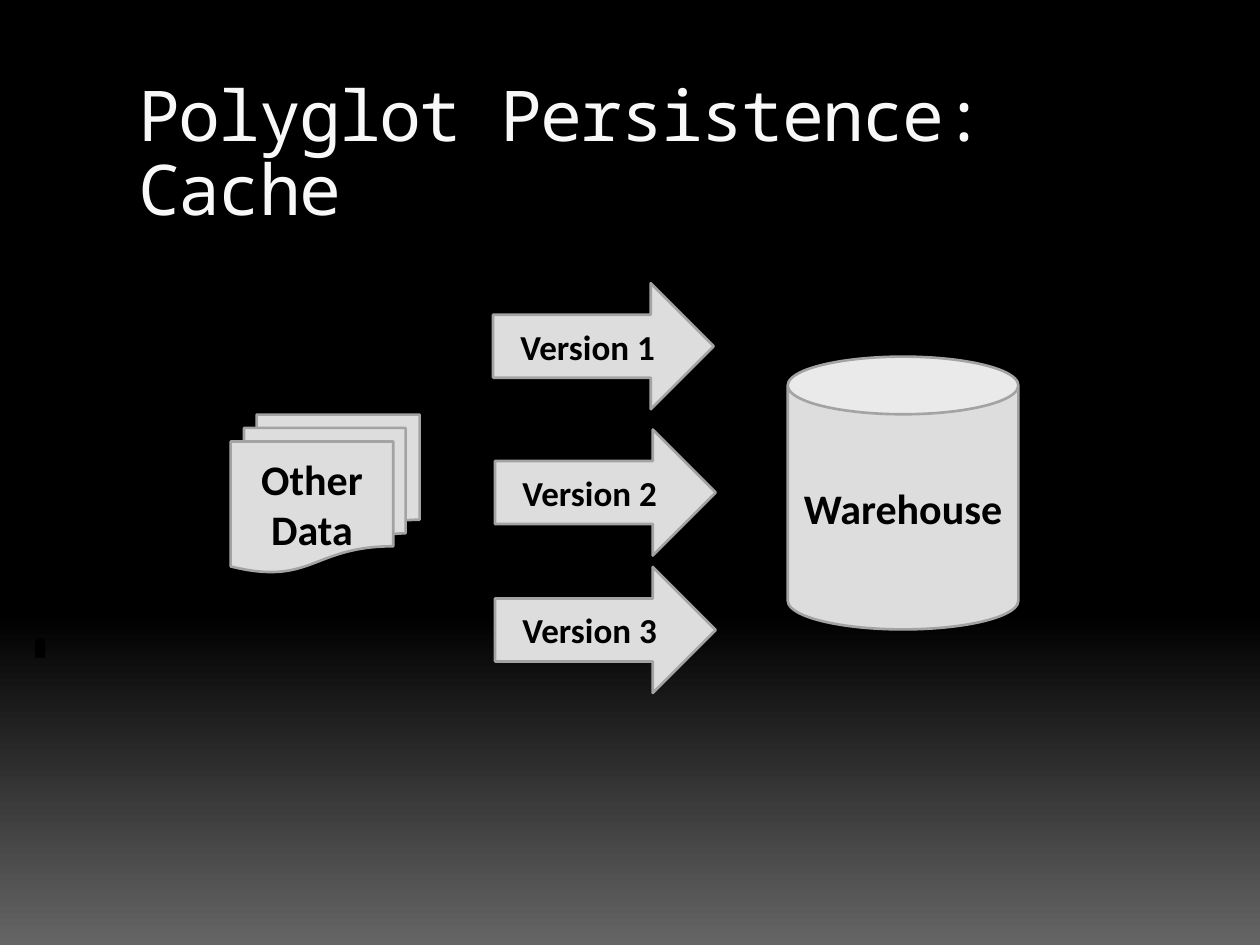
import pptx
import pptx.dml.color
import pptx.enum.shapes
import pptx.enum.text
import pptx.util

Cm = pptx.util.Cm
Pt = pptx.util.Pt
Kind = pptx.enum.shapes.MSO_SHAPE
Align = pptx.enum.text.PP_ALIGN
Anchor = pptx.enum.text.MSO_ANCHOR


def tint(code):
    """Turn a hex string into a colour."""
    return pptx.dml.color.RGBColor.from_string(code)


def style(para, face, size, code, bold=False):
    """Set the font of a paragraph."""
    font = para.font
    font.name, font.size, font.bold = face, Pt(size), bold
    font.color.rgb = tint(code)


def node(slide, kind, box, text, size):
    """Draw one grey shape with a bold label."""
    shape = slide.shapes.add_shape(kind, *map(Cm, box))
    shape.shadow.inherit = False
    shape.fill.solid()
    shape.fill.fore_color.rgb = tint("DDDDDD")
    shape.line.color.rgb = tint("A3A3A3")
    shape.line.width = Pt(1.5)
    frame = shape.text_frame
    frame.word_wrap = True
    frame.vertical_anchor = Anchor.MIDDLE
    para = frame.paragraphs[0]
    para.text = text
    para.alignment = Align.CENTER
    style(para, "Calibri", size, "000000", True)


def backdrop(slide, box):
    """Fill the background and place the dark edge mark."""
    fill = slide.background.fill
    fill.gradient()
    fill.gradient_angle = 270
    stops = zip(fill.gradient_stops, ((0.65, "000000"), (1, "656565")))
    for stop, (place, code) in stops:
        stop.position = place
        stop.color.rgb = tint(code)
    mark = slide.shapes.add_shape(Kind.RECTANGLE, *map(Cm, box))
    mark.shadow.inherit = False
    mark.fill.solid()
    mark.fill.fore_color.rgb = tint("000000")
    mark.line.fill.background()


def title(slide, box, text):
    """Place the slide title."""
    frame = slide.shapes.add_textbox(*map(Cm, box)).text_frame
    frame.word_wrap = True
    frame.margin_top = Cm(0.25)
    para = frame.paragraphs[0]
    para.text = text
    para.line_spacing = 0.88
    style(para, "Noto Sans Mono", 40, "F8F8F8")
    para.runs[0].font._element.set("spc", "-100")


def diagram(slide, box):
    """Draw the store, the documents and the version arrows."""
    left, top, width, height = box
    node(slide, Kind.CAN, (left + width - 4.65, top + 1.48, 4.65, 5.5),
         "Warehouse", 24)
    node(slide, Kind.FLOWCHART_MULTIDOCUMENT,
         (left, top + 2.65, 3.81, 3.18), "Other Data", 24)
    spots = ((5.29, 0), (5.33, 2.95), (5.33, height - 2.54))
    for num, (dx, dy) in enumerate(spots, 1):
        node(slide, Kind.RIGHT_ARROW, (left + dx, top + dy, 4.45, 2.54),
             f"Version {num}", 20)


def main():
    """Build and save the slide."""
    deck = pptx.Presentation()
    deck.slide_width, deck.slide_height = Cm(25.4), Cm(19.05)
    slide = deck.slides.add_slide(deck.slide_layouts[6])
    backdrop(slide, (0.71, 12.88, 0.2, 0.38))
    title(slide, (2.54, 1.42, 21.59, 2.54), "Polyglot Persistence: Cache")
    diagram(slide, (4.65, 5.71, 15.88, 8.26))
    deck.save("out.pptx")


if __name__ == "__main__":
    main()
